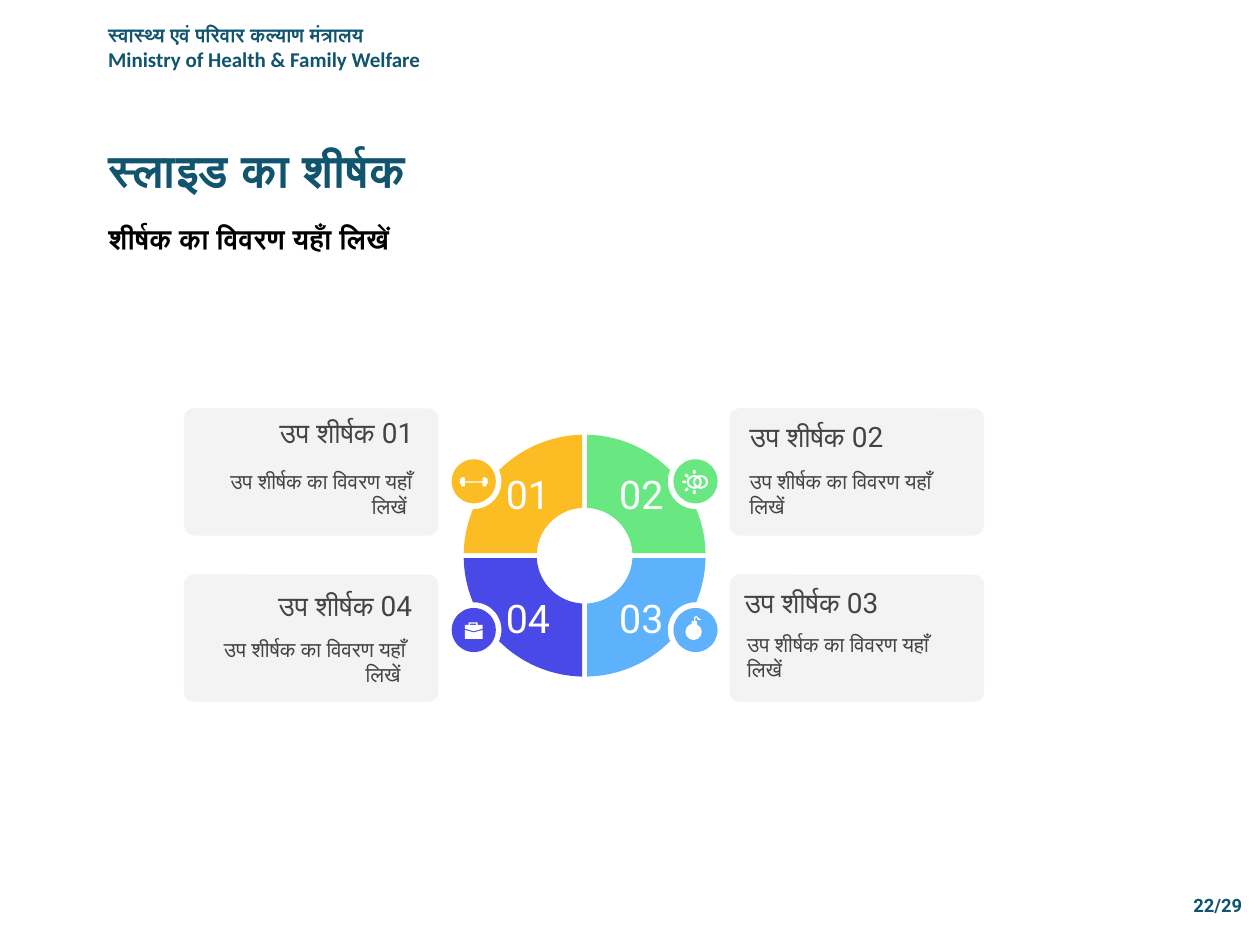
from math import atan2, cos, pi, sin

from lxml.etree import SubElement
from pptx import Presentation
from pptx.dml.color import RGBColor
from pptx.enum.shapes import MSO_SHAPE
from pptx.enum.text import MSO_ANCHOR, MSO_AUTO_SIZE, PP_ALIGN
from pptx.oxml.ns import qn
from pptx.util import Inches, Pt

COLORS = {
    "teal": "10546D", "black": "000000", "white": "FFFFFF",
    "card": "F3F3F3", "text": "434343",
    "yellow": "FCBD24", "green": "69E781", "blue": "5EB2FC", "indigo": "4949E7",
}
WHEEL_CENTER = (4.64, 4.41)
OUTER, INNER, HALF_GAP = 0.96, 0.38, 0.02
BADGE_X, BADGE_Y, BADGE_R, NOTCH_R = 0.88, 0.59, 0.175, 0.22
CARD_W, CARD_H = 2.02, 1.01
DETAIL = "उप शीर्षक का विवरण यहाँ लिखें"


def rgb(color):
    return RGBColor.from_string(COLORS[color])


def paint(shape, color):
    shape.shadow.inherit = False
    shape.fill.solid()
    shape.fill.fore_color.rgb = rgb(color)
    shape.line.fill.background()
    return shape


def add_preset(slide, kind, box, color):
    return paint(slide.shapes.add_shape(kind, *map(Inches, box)), color)


def add_outline(slide, points, color):
    corners = [(Inches(x), Inches(y)) for x, y in points]
    builder = slide.shapes.build_freeform(*corners[0])
    builder.add_line_segments(corners[1:], close=True)
    return paint(builder.convert_to_shape(), color)


def add_run(paragraph, text, size, color, font="Roboto", bold=False):
    run = paragraph.add_run()
    run.text = text
    run.font.name = font
    run.font.size = Pt(size)
    run.font.bold = bold
    run.font.color.rgb = rgb(color)


def set_insets(frame, left, top, right, bottom):
    frame.margin_left, frame.margin_top = Inches(left), Inches(top)
    frame.margin_right, frame.margin_bottom = Inches(right), Inches(bottom)


def add_text_box(slide, box):
    frame = slide.shapes.add_textbox(*map(Inches, box)).text_frame
    frame.word_wrap = True
    return frame


def add_header(slide, box):
    frame = add_text_box(slide, box)
    add_run(frame.paragraphs[0], "स्वास्थ्य एवं परिवार कल्याण मंत्रालय", 11.2, "teal", "Calibri", True)
    add_run(frame.add_paragraph(), "Ministry of Health & Family Welfare", 12, "teal", "Calibri", True)


def add_page_number(slide, box):
    paragraph = add_text_box(slide, box).paragraphs[0]
    paragraph.alignment = PP_ALIGN.CENTER
    add_run(paragraph, "22/29", 10.5, "teal", bold=True)


def fill_placeholder(placeholder, box, spacing):
    """Move a placeholder and return its first paragraph, flush left and unbulleted."""
    placeholder.left, placeholder.top, placeholder.width, placeholder.height = map(Inches, box)
    frame = placeholder.text_frame
    frame.auto_size = MSO_AUTO_SIZE.NONE
    frame.vertical_anchor = MSO_ANCHOR.TOP
    paragraph = frame.paragraphs[0]
    paragraph.alignment = PP_ALIGN.LEFT
    paragraph.line_spacing = spacing
    paragraph.space_before = Pt(0)
    properties = paragraph._p.get_or_add_pPr()
    properties.set("marL", "0")
    properties.set("indent", "0")
    SubElement(properties, qn("a:buNone"))
    return paragraph


def arc(center, radius, start, end, steps=24):
    return [(center[0] + radius * cos(start + (end - start) * i / steps),
             center[1] + radius * sin(start + (end - start) * i / steps))
            for i in range(steps + 1)]


def quadrant_points():
    """Notched ring sector in the lower right quarter, around (0, 0)."""
    badge = (BADGE_X, BADGE_Y)
    distance, heading = (BADGE_X**2 + BADGE_Y**2) ** 0.5, atan2(BADGE_Y, BADGE_X)
    along = (OUTER**2 - NOTCH_R**2 + distance**2) / (2 * distance)
    spread = atan2((OUTER**2 - along**2) ** 0.5, along)
    low, high = heading + spread, heading - spread
    notch_low, notch_high = (
        atan2(OUTER * sin(a) - BADGE_Y, OUTER * cos(a) - BADGE_X) % (2 * pi) for a in (low, high))
    inner_trim, outer_trim = HALF_GAP / INNER, HALF_GAP / OUTER
    return (arc((0, 0), INNER, inner_trim, pi / 2 - inner_trim)
            + arc((0, 0), OUTER, pi / 2 - outer_trim, low)
            + arc(badge, NOTCH_R, notch_low, notch_high)
            + arc((0, 0), OUTER, high, outer_trim))


def add_quadrant(slide, center, side, level, number, color, add_icon):
    """side and level are -1 or 1: left or right, upper or lower."""
    x, y = center
    points = [(x + side * dx, y + level * dy) for dx, dy in quadrant_points()]
    frame = add_outline(slide, points, color).text_frame
    set_insets(frame, 0.07 if side > 0 else 0.15, 0.07, 0.15 if side > 0 else 0.07, 0.07)
    frame.vertical_anchor = MSO_ANCHOR.MIDDLE
    frame.paragraphs[0].alignment = PP_ALIGN.CENTER
    add_run(frame.paragraphs[0], number, 22.5, "white")
    badge_x, badge_y = x + side * BADGE_X, y + level * BADGE_Y
    add_preset(slide, MSO_SHAPE.OVAL,
               (badge_x - BADGE_R, badge_y - BADGE_R, 2 * BADGE_R, 2 * BADGE_R), color)
    add_icon(slide, badge_x, badge_y)


def add_icon_part(slide, kind, x, y, box):
    left, top, width, height = box
    return add_preset(slide, kind, (x + left, y + top, width, height), "white")


def add_icon_outline(slide, x, y, points):
    add_outline(slide, [(x + dx, y + dy) for dx, dy in points], "white")


def add_dumbbell(slide, x, y):
    for box in ((-0.11, 0, 0.22, 0.01), (-0.1, -0.03, 0.03, 0.07), (0.07, -0.03, 0.03, 0.07),
                (-0.11, -0.02, 0.02, 0.04), (0.09, -0.02, 0.02, 0.04)):
        add_icon_part(slide, MSO_SHAPE.ROUNDED_RECTANGLE, x, y, box)


def add_rings(slide, x, y):
    for left in (-0.07, -0.02):
        ring = add_icon_part(slide, MSO_SHAPE.DONUT, x, y, (left, -0.05, 0.12, 0.11))
        ring.adjustments[0] = 0.15
    for left, top, angle in ((-0.02, -0.09, 0), (-0.08, -0.06, -45), (-0.1, -0.01, 90),
                             (-0.08, 0.05, 45), (-0.02, 0.07, 0)):
        ray = add_icon_part(slide, MSO_SHAPE.ROUNDED_RECTANGLE, x, y, (left, top, 0.02, 0.03))
        ray.rotation = angle


def add_bomb(slide, x, y):
    add_icon_part(slide, MSO_SHAPE.OVAL, x, y, (-0.08, -0.05, 0.13, 0.13))
    add_icon_part(slide, MSO_SHAPE.ROUNDED_RECTANGLE, x, y, (-0.03, -0.07, 0.04, 0.03))
    add_icon_outline(slide, x, y, [(-0.01, -0.07), (-0.01, -0.1), (0, -0.11), (0.01, -0.11),
                                   (0.03, -0.09), (0.05, -0.08), (0.02, -0.08), (0.01, -0.1),
                                   (0, -0.1), (0, -0.07)])


def add_briefcase(slide, x, y):
    add_icon_outline(slide, x, y, [(-0.07, -0.04), (0.07, -0.04), (0.07, -0.01), (0, 0.01), (-0.07, -0.01)])
    add_icon_outline(slide, x, y, [(-0.07, 0), (0, 0.02), (0.07, 0), (0.07, 0.07), (-0.07, 0.07)])
    add_icon_outline(slide, x, y, [(-0.04, -0.04), (-0.04, -0.06), (0.03, -0.06), (0.03, -0.04),
                                   (0.02, -0.04), (0.02, -0.05), (-0.03, -0.05), (-0.03, -0.04)])


def add_card(slide, left, top, align, number, heading_box, detail_box):
    """Text boxes are given relative to the card's corner."""
    card = add_preset(slide, MSO_SHAPE.ROUNDED_RECTANGLE, (left, top, CARD_W, CARD_H), "card")
    card.adjustments[0] = 0.077
    detail = DETAIL + " " if align == PP_ALIGN.RIGHT else DETAIL
    for box, text, size in ((heading_box, f"उप शीर्षक {number}", 16), (detail_box, detail, 12)):
        frame = add_text_box(slide, (left + box[0], top + box[1], *box[2:]))
        set_insets(frame, 0.07, 0.07, 0.07, 0.07)
        frame.vertical_anchor = MSO_ANCHOR.MIDDLE
        frame.paragraphs[0].alignment = align
        add_run(frame.paragraphs[0], text, size, "text")


def main():
    presentation = Presentation()
    presentation.slide_width, presentation.slide_height = Inches(10), Inches(7.5)
    slide = presentation.slides.add_slide(presentation.slide_layouts[1])
    add_page_number(slide, (9.33, 7.05, 0.67, 0.28))
    add_header(slide, (0.76, 0.13, 3.43, 0.49))
    title = fill_placeholder(slide.shapes.title, (0.76, 1.16, 4.6, 0.47), 0.8)
    add_run(title, "स्लाइड का शीर्षक", 26, "teal", bold=True)
    subtitle = fill_placeholder(slide.placeholders[1], (0.76, 1.8, 5.39, 0.37), Pt(12.4))
    add_run(subtitle, "शीर्षक का विवरण यहाँ लिखें", 16, "black", "Calibri", True)

    topics = (
        ("01", -1, -1, "yellow", add_dumbbell, (0, 0.05, 1.89, 0.28), (0.1, 0.38, 1.78, 0.6)),
        ("02", 1, -1, "green", add_rings, (0.09, 0.05, 1.87, 0.35), (0.09, 0.38, 1.62, 0.6)),
        ("03", 1, 1, "blue", add_bomb, (0.05, 0.05, 1.91, 0.34), (0.07, 0.35, 1.62, 0.6)),
        ("04", -1, 1, "indigo", add_briefcase, (0.03, 0.05, 1.85, 0.39), (0.1, 0.39, 1.73, 0.6)),
    )
    for number, side, level, color, add_icon, heading_box, detail_box in topics:
        add_quadrant(slide, WHEEL_CENTER, side, level, number, color, add_icon)
        add_card(slide, 1.46 if side < 0 else 5.79, 3.24 if level < 0 else 4.56,
                 PP_ALIGN.RIGHT if side < 0 else PP_ALIGN.LEFT, number, heading_box, detail_box)
    presentation.save("out.pptx")


if __name__ == "__main__":
    main()
